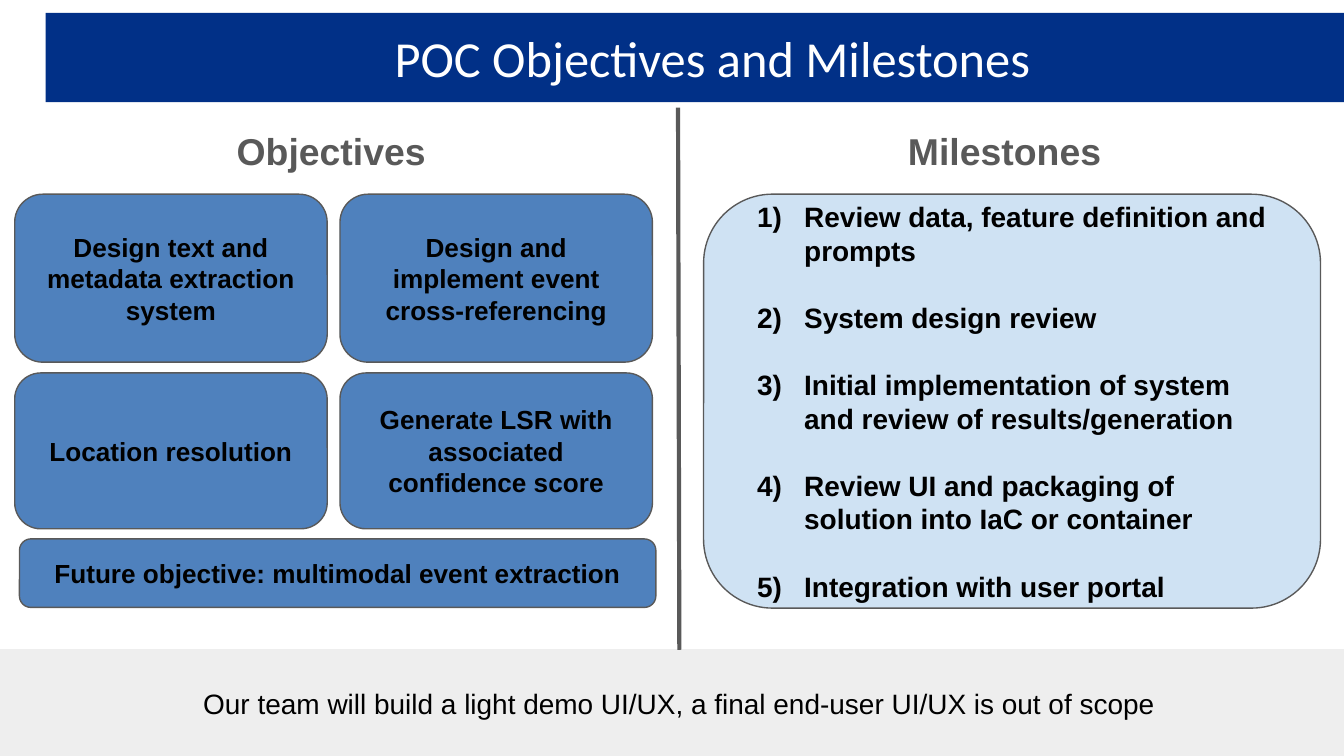
"""Build the slide of proof-of-concept objectives and milestones."""
from dataclasses import dataclass
from typing import Optional

from lxml import etree
from pptx import Presentation
from pptx import util as u
from pptx.dml.color import RGBColor
from pptx.enum import shapes, text
from pptx.oxml import ns

COLUMNS, ROWS = 100, 56.25
CELL = u.Inches(10) / COLUMNS


@dataclass(frozen=True)
class Theme:
    navy: str = "013087"
    blue: str = "4F81BD"
    pale: str = "CFE2F3"
    silver: str = "EEEEEE"
    grey: str = "595959"
    black: str = "000000"
    white: str = "FFFFFF"
    body_font: str = "Arial"
    title_font: str = "Calibri"
    title: float = 27
    heading: float = 20
    body: float = 15
    card: float = 14


@dataclass(frozen=True)
class Frame:
    column: float
    row: float
    columns: float
    rows: float

    def lengths(self) -> list[int]:
        return [grid(n) for n in (self.column, self.row, self.columns, self.rows)]


@dataclass(frozen=True)
class Style:
    size: float
    color: str
    bold: bool = False
    font: str = Theme.body_font
    align: text.PP_ALIGN = text.PP_ALIGN.CENTER
    anchor: text.MSO_ANCHOR = text.MSO_ANCHOR.MIDDLE


THEME = Theme()
TITLE = Style(THEME.title, THEME.white, font=THEME.title_font)
HEADING = Style(THEME.heading, THEME.grey, bold=True, anchor=text.MSO_ANCHOR.TOP)
CARD = Style(THEME.card, THEME.black, bold=True)
FOOTER = Style(THEME.body, THEME.black)
STEP = Style(THEME.body, THEME.black, bold=True, align=text.PP_ALIGN.LEFT)

OBJECTIVES = [
    ["Design text and metadata extraction system",
     "Design and implement event cross-referencing"],
    ["Location resolution",
     "Generate LSR with associated confidence score"],
]
CARD_ROWS = [(14.45, 12.5), (27.75, 11.6)]
CARD_LEFT, CARD_WIDTH, CARD_PITCH = 1.1, 23.25, 24.2
MILESTONES = [
    "Review data, feature definition and prompts",
    "System design review",
    "Initial implementation of system and review of results/generation",
    "Review UI and packaging of solution into IaC or container",
    "Integration with user portal",
]


def grid(count: float) -> int:
    """Turn a count of grid cells into a length."""
    return u.Emu(round(count * CELL))


def number(para) -> None:
    """Give a paragraph a hanging number such as 1)."""
    props = para._p.get_or_add_pPr()
    props.set("marL", str(u.Inches(0.5)))
    props.set("indent", str(-u.Inches(0.35)))
    color = etree.SubElement(props, ns.qn("a:buClr"))
    etree.SubElement(color, ns.qn("a:srgbClr"), val=THEME.black)
    etree.SubElement(props, ns.qn("a:buFont"), typeface=THEME.body_font)
    etree.SubElement(props, ns.qn("a:buAutoNum"), type="arabicParenR")


def write(box, lines: list[str], style: Style, numbered: bool = False) -> None:
    """Fill a box with styled paragraphs."""
    frame = box.text_frame
    frame.word_wrap = True
    frame.vertical_anchor = style.anchor
    frame.margin_left = frame.margin_right = u.Inches(0.1)
    frame.margin_top = frame.margin_bottom = u.Inches(0.1)
    for index, line in enumerate(lines):
        para = frame.add_paragraph() if index else frame.paragraphs[0]
        para.text = line
        para.alignment = style.align
        if numbered:
            para.space_before = u.Pt(18 if index else 0)
            number(para)
        para.font.name = style.font
        para.font.size = u.Pt(style.size)
        para.font.bold = style.bold
        para.font.color.rgb = RGBColor.from_string(style.color)


def add_label(page, frame: Frame, line: str, style: Style) -> None:
    """Add a plain text box."""
    write(page.shapes.add_textbox(*frame.lengths()), [line], style)


def add_panel(page, frame: Frame, fill: str, outline: Optional[str] = None,
              rounded: bool = False):
    """Add a filled rectangle, square or rounded."""
    kind = shapes.MSO_SHAPE.ROUNDED_RECTANGLE if rounded else shapes.MSO_SHAPE.RECTANGLE
    box = page.shapes.add_shape(kind, *frame.lengths())
    box.shadow.inherit = False
    box.fill.solid()
    box.fill.fore_color.rgb = RGBColor.from_string(fill)
    if outline:
        box.line.color.rgb = RGBColor.from_string(outline)
        box.line.width = u.Pt(0.75)
    else:
        box.line.fill.background()
    return box


def add_card(page, frame: Frame, line: str) -> None:
    """Add a rounded objective card."""
    write(add_panel(page, frame, THEME.blue, THEME.grey, rounded=True), [line], CARD)


def add_divider(page, footer) -> None:
    """Draw the rule from the title bar down to the footer."""
    rule = page.shapes.add_connector(
        shapes.MSO_CONNECTOR.STRAIGHT, grid(50.45), grid(8), grid(50.55), grid(48.35))
    rule.end_connect(footer, 0)
    rule.line.color.rgb = RGBColor.from_string(THEME.grey)
    rule.line.width = u.Pt(2.25)
    etree.SubElement(rule._element.spPr, ns.qn("a:effectLst"))


def main() -> None:
    """Build and save the deck."""
    deck = Presentation()
    deck.slide_width, deck.slide_height = grid(COLUMNS), grid(ROWS)
    page = deck.slides.add_slide(deck.slide_layouts[6])

    add_panel(page, Frame(3.4, 0.95, 96.6, 6.65), THEME.navy)
    add_label(page, Frame(9.4, 1.1, 87.2, 6.3), "POC Objectives and Milestones", TITLE)

    for (top, height), names in zip(CARD_ROWS, OBJECTIVES):
        for index, name in enumerate(names):
            left = CARD_LEFT + index * CARD_PITCH
            add_card(page, Frame(left, top, CARD_WIDTH, height), name)

    footer = add_panel(page, Frame(0, 48.35, 101.1, 7.9), THEME.silver, THEME.silver)
    write(footer, ["Our team will build a light demo UI/UX, "
                   "a final end-user UI/UX is out of scope"], FOOTER)
    add_divider(page, footer)

    add_label(page, Frame(6.1, 8.55, 37.1, 5.1), "Objectives", HEADING)
    add_label(page, Frame(65, 8.55, 19.5, 5.1), "Milestones", HEADING)

    plan = add_panel(page, Frame(52.35, 14.45, 45.9, 30.8), THEME.pale, THEME.grey, rounded=True)
    write(plan, MILESTONES, STEP, numbered=True)
    add_card(page, Frame(1.45, 40.1, 47.35, 5.1), "Future objective: multimodal event extraction")

    deck.save("out.pptx")


if __name__ == "__main__":
    main()
